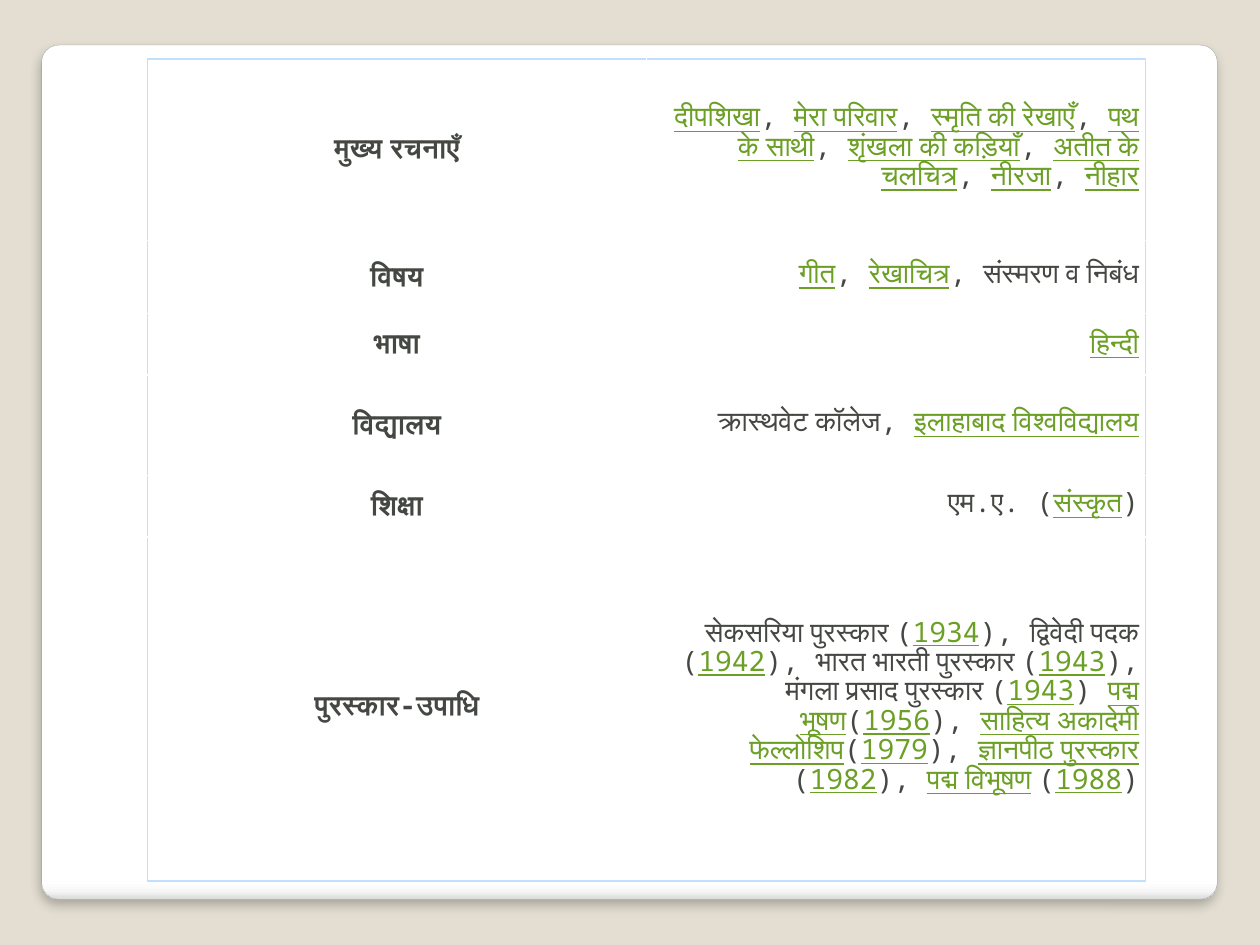
from dataclasses import dataclass

from pptx import Presentation
from pptx import util as u
from pptx.dml.color import RGBColor
from pptx.enum import shapes, text
from pptx.oxml import parse_xml
from pptx.oxml.ns import nsdecls


@dataclass(frozen=True)
class Theme:
    """Colours, type and line weights of the slide."""
    backdrop: str = "E3DED1"
    paper: str = "FFFFFF"
    paper_edge: str = "A4A4A4"
    ink: str = "454743"
    link: str = "6B9F25"
    rule: str = "C1E0FF"
    font: str = "Noto Sans Mono"
    size: float = 16
    leading: float = 16.8
    rule_width: float = 1


THEME = Theme()
PAPER_STOPS = [(0, THEME.paper), (98, THEME.paper), (99, "F7F7F7"), (100, "DADADA")]
COLUMN_WIDTH = 10.06
LINK_MARK = "|"
FACTS = [
    ("मुख्य रचनाएँ", 3.66,
     "|दीपशिखा|, |मेरा परिवार|, |स्मृति की रेखाएँ|, |पथ के साथी|, "
     "|शृंखला की कड़ियाँ|, |अतीत के चलचित्र|, |नीरजा|, |नीहार|"),
    ("विषय", 1.47, "|गीत|, |रेखाचित्र|, संस्मरण व निबंध"),
    ("भाषा", 1.24, "|हिन्दी|"),
    ("विद्यालय", 2.03, "क्रास्थवेट कॉलेज, |इलाहाबाद विश्वविद्यालय|"),
    ("शिक्षा", 1.24, "एम.ए. (|संस्कृत|)"),
    ("पुरस्कार-उपाधि", 6.93,
     "सेकसरिया पुरस्कार (|1934|), द्विवेदी पदक (|1942|), भारत भारती पुरस्कार (|1943|), "
     "मंगला प्रसाद पुरस्कार (|1943|) |पद्म भूषण|(|1956|), "
     "|साहित्य अकादेमी फेल्लोशिप|(|1979|), |ज्ञानपीठ पुरस्कार| (|1982|), "
     "|पद्म विभूषण| (|1988|)"),
]


def apply_format(target, values):
    """Set each attribute of target from a dict of values."""
    for name, value in values.items():
        setattr(target, name, value)


def fill_solid(fill, colour):
    """Give a fill one flat colour."""
    fill.solid()
    fill.fore_color.rgb = RGBColor.from_string(colour)


def add_paper(slide):
    """Draw the rounded sheet with its shaded foot and soft shadow."""
    paper = slide.shapes.add_shape(shapes.MSO_SHAPE.ROUNDED_RECTANGLE,
                                   u.Cm(0.84), u.Cm(0.91), u.Cm(23.7), u.Cm(17.22))
    paper.adjustments[0] = 0.02
    paper.fill.gradient()
    paper.fill.gradient_angle = 270
    stops = "".join(f'<a:gs pos="{pos * 1000}"><a:srgbClr val="{colour}"/></a:gs>'
                    for pos, colour in PAPER_STOPS)
    stop_list = paper.fill._fill._gradFill.gsLst
    stop_list.getparent().replace(
        stop_list, parse_xml(f'<a:gsLst {nsdecls("a")}>{stops}</a:gsLst>'))
    fill_solid(paper.line.fill, THEME.paper_edge)
    paper.line.width = u.Pt(0.16)
    paper.shadow.inherit = False
    paper._element.spPr.find("{*}effectLst").append(parse_xml(
        f'<a:outerShdw {nsdecls("a")} blurRad="{u.Pt(6)}" dist="{u.Pt(4)}" '
        'dir="5400000" algn="tl" rotWithShape="0"><a:srgbClr val="000000">'
        '<a:alpha val="25000"/></a:srgbClr></a:outerShdw>'))


def write_marked(cell, marked, align, bold):
    """Write text in a cell, styling the parts between marks as links."""
    paragraph = cell.text_frame.paragraphs[0]
    apply_format(paragraph, {"alignment": align, "line_spacing": u.Pt(THEME.leading)})
    for index, part in enumerate(marked.split(LINK_MARK)):
        if part:
            linked = index % 2 == 1
            run = paragraph.add_run()
            run.text = part
            apply_format(run.font, {"name": THEME.font, "size": u.Pt(THEME.size),
                                    "bold": bold, "underline": linked})
            run.font.color.rgb = RGBColor.from_string(THEME.link if linked else THEME.ink)


def add_borders(cell, sides):
    """Rule the given sides of a cell, named in L, R, T, B order."""
    properties = cell._tc.get_or_add_tcPr()
    for index, side in enumerate(sides):
        properties.insert(index, parse_xml(
            f'<a:ln{side} {nsdecls("a")} w="{u.Pt(THEME.rule_width)}"><a:solidFill>'
            f'<a:srgbClr val="{THEME.rule}"/></a:solidFill></a:ln{side}>'))


def add_facts(slide):
    """Build the table of facts, ruled on its outer edge only."""
    heights = [height for _, height, _ in FACTS]
    facts = slide.shapes.add_table(len(FACTS), 2, u.Cm(2.97), u.Cm(1.19),
                                   u.Cm(2 * COLUMN_WIDTH), u.Cm(sum(heights))).table
    apply_format(facts, {"first_row": False, "horz_banding": False})
    for column in facts.columns:
        column.width = u.Cm(COLUMN_WIDTH)
    margins = {f"margin_{side}": u.Cm(0.13) for side in ("left", "right", "top", "bottom")}
    for index, (label, height, detail) in enumerate(FACTS):
        facts.rows[index].height = u.Cm(height)
        ends = ("T" if index == 0 else "") + ("B" if index == len(FACTS) - 1 else "")
        sides = [(label, text.PP_ALIGN.CENTER, True, "L"),
                 (detail, text.PP_ALIGN.RIGHT, False, "R")]
        for column, (wording, align, bold, edge) in enumerate(sides):
            cell = facts.cell(index, column)
            apply_format(cell, {"vertical_anchor": text.MSO_ANCHOR.MIDDLE, **margins})
            fill_solid(cell.fill, THEME.paper)
            write_marked(cell, wording, align, bold)
            add_borders(cell, edge + ends)


def main():
    """Build the slide and save it."""
    deck = Presentation()
    apply_format(deck, {"slide_width": u.Cm(25.4), "slide_height": u.Cm(19.05)})
    slide = deck.slides.add_slide(deck.slide_layouts.get_by_name("Blank"))
    fill_solid(slide.background.fill, THEME.backdrop)
    add_paper(slide)
    add_facts(slide)
    deck.save("out.pptx")


if __name__ == "__main__":
    main()
